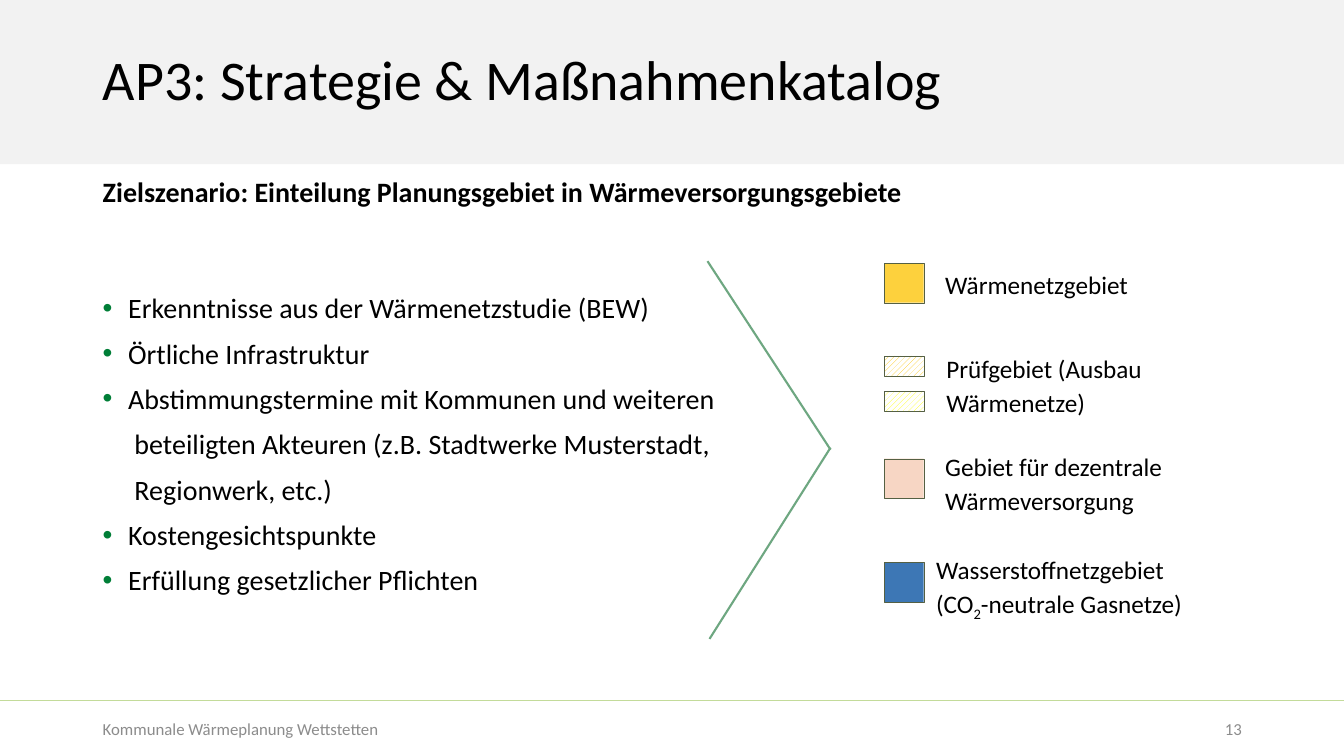
from dataclasses import dataclass

from lxml.etree import SubElement as Sub
from pptx import Presentation
from pptx.dml.color import RGBColor as Rgb
from pptx.enum.dml import MSO_PATTERN as Pat
from pptx.enum.shapes import MSO_CONNECTOR as Con, MSO_SHAPE as Form
from pptx.enum.text import MSO_ANCHOR as Anchor, PP_ALIGN as Align
from pptx.oxml.ns import qn
from pptx.util import Cm, Pt


@dataclass(frozen=True)
class Theme:
    font: str = "Calibri"
    ink: str = "000000"
    grey: str = "8C8C8C"
    band: str = "F2F2F2"
    rule: str = "C3DB9A"
    arrow: str = "6EA781"
    dot: str = "007E37"
    edge: str = "556043"
    white: str = "FFFFFF"
    gold: str = "FDC300"
    yellow: str = "FFFF00"
    peach: str = "F4C0A4"
    blue: str = "004D9E"
    head: int = 40
    body: int = 20
    key: int = 18
    foot: int = 12


def rgb(code):
    return Rgb.from_string(code)


class Page:
    def __init__(self, deck, theme):
        self.look = theme
        self.slide = deck.slides.add_slide(deck.slide_layouts[5])
        self.shapes = self.slide.shapes

    def runs(self, para, parts, size, color, bold=False):
        for i, part in enumerate(parts):
            run = para.add_run()
            run.text = part
            font = run.font
            font.name, font.size, font.bold = self.look.font, Pt(size), bold
            font.color.rgb = rgb(color)
            if i % 2:
                run._r.get_or_add_rPr().set("baseline", "-25000")

    def title(self, text, x, y, w, h):
        box = self.shapes.title
        box.left, box.top, box.width, box.height = Cm(x), Cm(y), Cm(w), Cm(h)
        box.text_frame.vertical_anchor = Anchor.MIDDLE
        para = box.text_frame.paragraphs[0]
        para.alignment, para.line_spacing = Align.LEFT, 0.9
        self.runs(para, [text], self.look.head, self.look.ink)

    def frame(self, x, y, w, h, anchor=Anchor.TOP):
        box = self.shapes.add_textbox(Cm(x), Cm(y), Cm(w), Cm(h))
        box.text_frame.word_wrap = True
        box.text_frame.vertical_anchor = anchor
        return box.text_frame

    def label(self, text, x, y, w, h, size, color, bold=False,
              anchor=Anchor.TOP, align=Align.LEFT):
        para = self.frame(x, y, w, h, anchor).paragraphs[0]
        para.alignment = align
        self.runs(para, [text], size, color, bold)

    def lines(self, rows, x, y, w, h):
        frame = self.frame(x, y, w, h)
        for i, parts in enumerate(rows):
            para = frame.add_paragraph() if i else frame.paragraphs[0]
            para.line_spacing = 1.1
            self.runs(para, parts, self.look.key, self.look.ink)

    def points(self, rows, x, y, w, h):
        frame = self.frame(x, y, w, h)
        for i, (dot, text) in enumerate(rows):
            para = frame.add_paragraph() if i else frame.paragraphs[0]
            para.line_spacing, para.space_after = 1.1, Pt(6)
            prop = para._p.get_or_add_pPr()
            prop.set("marL", str(Cm(0.64 if dot else 0.8)))
            if dot:
                prop.set("indent", str(-Cm(0.64)))
                Sub(Sub(prop, qn("a:buClr")), qn("a:srgbClr"), val=self.look.dot)
                Sub(prop, qn("a:buFont"), typeface="Arial")
                Sub(prop, qn("a:buChar"), char="•")
            self.runs(para, [text], self.look.body, self.look.ink)

    def rect(self, x, y, w, h, color):
        box = self.shapes.add_shape(Form.RECTANGLE, Cm(x), Cm(y), Cm(w), Cm(h))
        box.shadow.inherit = False
        box.fill.solid()
        box.fill.fore_color.rgb = rgb(color)
        box.line.fill.background()
        return box

    def band(self, w, h):
        box = self.rect(0, 0, w, h, self.look.band)
        self.shapes._spTree.insert(2, box._element)

    def swatch(self, x, y, h, color, alpha=None):
        box = self.rect(x, y, 1, h, color)
        box.line.color.rgb = rgb(self.look.edge)
        box.line.width = Pt(0.25)
        if alpha:
            tone = box._element.spPr.find(qn("a:solidFill")).find(qn("a:srgbClr"))
            Sub(tone, qn("a:alpha"), val=str(alpha * 1000))
        else:
            box.fill.patterned()
            box.fill.pattern = Pat.WIDE_UPWARD_DIAGONAL
            box.fill.fore_color.rgb = rgb(color)
            box.fill.back_color.rgb = rgb(self.look.white)

    def line(self, x1, y1, x2, y2, color, width):
        link = self.shapes.add_connector(
            Con.STRAIGHT, Cm(x1), Cm(y1), Cm(x2), Cm(y2))
        link.line.color.rgb = rgb(color)
        link.line.width = Pt(width)
        Sub(link._element.spPr, qn("a:effectLst"))


def main():
    deck = Presentation()
    wide, left = 33.87, 2.34
    deck.slide_width, deck.slide_height = Cm(wide), Cm(19.05)
    look = Theme()
    page = Page(deck, look)

    page.band(wide, 4.14)
    page.line(0, 17.65, wide, 17.65, look.rule, 0.5)
    page.title("AP3: Strategie & Maßnahmenkatalog", left, 0.23, 29.21, 3.68)
    page.label("Kommunale Wärmeplanung Wettstetten", left, 17.86, 20.32, 1.02,
               look.foot, look.grey, anchor=Anchor.MIDDLE)
    page.label("13", 29.24, 17.86, 2.31, 1.02, look.foot, look.grey,
               anchor=Anchor.MIDDLE, align=Align.RIGHT)
    page.label("Zielszenario: Einteilung Planungsgebiet in Wärmeversorgungsgebiete",
               left, 4.27, 21.62, 1.12, look.body, look.ink, bold=True)

    page.points([
        (True, "Erkenntnisse aus der Wärmenetzstudie (BEW)"),
        (True, "Örtliche Infrastruktur"),
        (True, "Abstimmungstermine mit Kommunen und weiteren"),
        (False, "beteiligten Akteuren (z.B. Stadtwerke Musterstadt,"),
        (False, "Regionwerk, etc.)"),
        (True, "Kostengesichtspunkte"),
        (True, "Erfüllung gesetzlicher Pflichten"),
    ], left, 7.12, 16.81, 8.64)

    for y, high, color, alpha in [
        (6.63, 1, look.gold, 76),
        (8.97, 0.5, look.gold, None),
        (9.86, 0.5, look.yellow, None),
        (11.56, 1, look.peach, 64),
        (14.17, 1, look.blue, 76),
    ]:
        page.swatch(22.28, y, high, color, alpha)

    for x, y, rows in [
        (23.57, 6.58, [["Wärmenetzgebiet"]]),
        (23.6, 8.71, [["Prüfgebiet (Ausbau"], ["Wärmenetze)"]]),
        (23.57, 11.18, [["Gebiet für dezentrale"], ["Wärmeversorgung"]]),
        (23.34, 13.77, [["Wasserstoffnetzgebiet"],
                        ["(CO", "2", "-neutrale Gasnetze)"]]),
    ]:
        page.lines(rows, x, y, 10, 0.9 * len(rows))

    page.line(17.83, 6.58, 20.93, 11.33, look.arrow, 1.5)
    page.line(17.88, 16.1, 20.93, 11.28, look.arrow, 1.5)
    deck.save("out.pptx")


if __name__ == "__main__":
    main()
